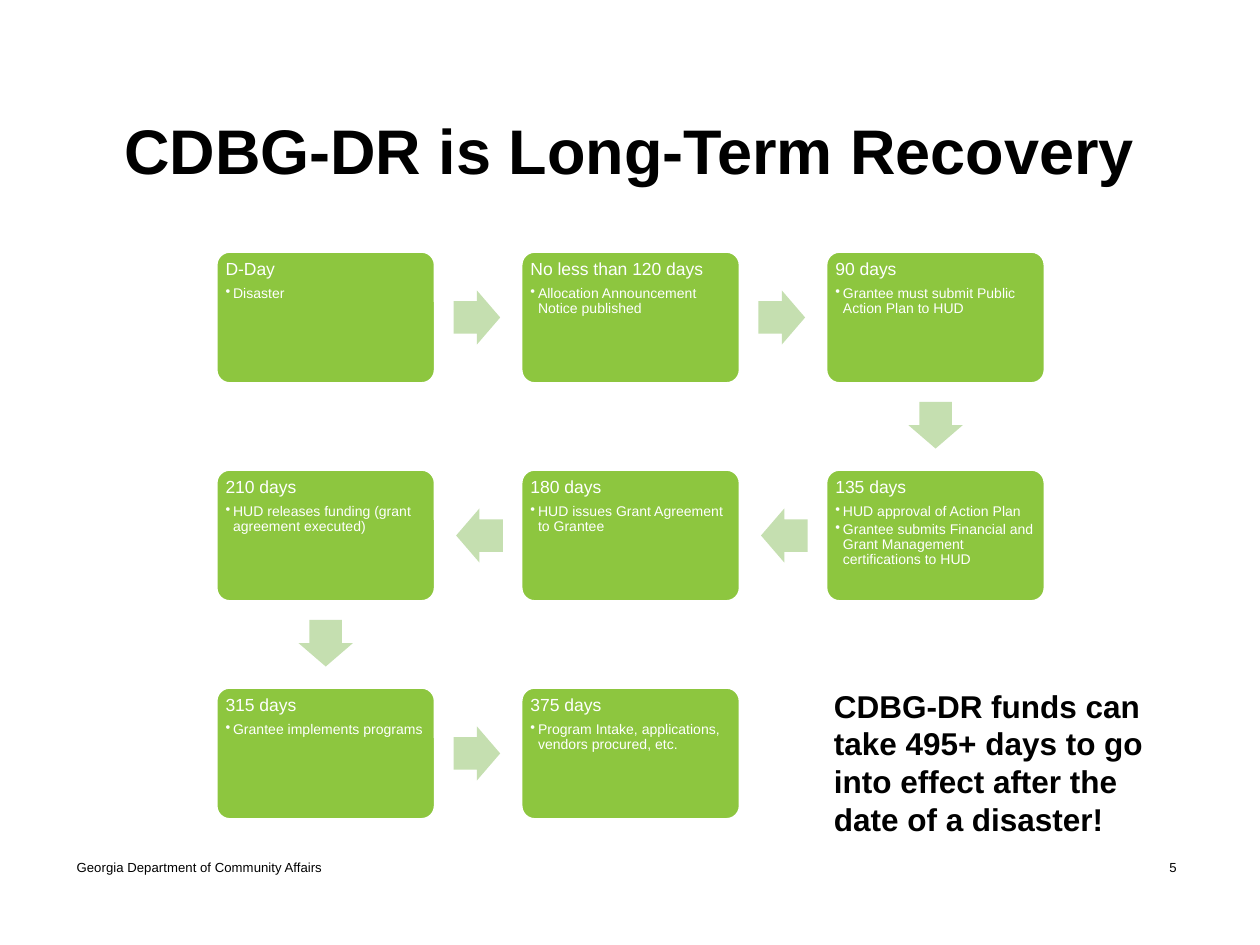
from itertools import pairwise
from math import atan2, degrees

from lxml.etree import SubElement
from pptx import Presentation
from pptx.dml.color import RGBColor
from pptx.enum.shapes import MSO_SHAPE as SHAPE
from pptx.enum.text import MSO_ANCHOR as ANCHOR, PP_ALIGN as ALIGN
from pptx.oxml.ns import qn
from pptx.util import Inches, Pt

COLORS = {"box": "8DC63F", "arrow": "C5DFB0", "light": "FFFFFF", "dark": "000000"}
STEPS = [
    ("D-Day", ["Disaster"]),
    ("No less than 120 days", ["Allocation Announcement Notice published"]),
    ("90 days", ["Grantee must submit Public Action Plan to HUD"]),
    ("135 days", ["HUD approval of Action Plan",
                  "Grantee submits Financial and Grant Management certifications to HUD"]),
    ("180 days", ["HUD issues Grant Agreement to Grantee"]),
    ("210 days", ["HUD releases funding (grant agreement executed)"]),
    ("315 days", ["Grantee implements programs"]),
    ("375 days", ["Program Intake, applications, vendors procured, etc."]),
]
COLUMNS = 3
BOX_WIDTH, BOX_HEIGHT = 1.73, 1.04
COLUMN_STEP, ROW_STEP = 2.42, 1.73
ARROW_LENGTH, ARROW_BREADTH, ARROW_SHIFT = 0.37, 0.43, 0.01


def color(name):
    """Return the named palette colour."""
    return RGBColor.from_string(COLORS[name])


def style(paragraph, size, color_name="dark", bold=False):
    """Set the font of every run in a paragraph."""
    for run in paragraph.runs:
        run.font.name, run.font.size, run.font.bold = "Arial", Pt(size), bold
        run.font.color.rgb = color(color_name)


def add_bullet(paragraph):
    """Give a paragraph a hanging round bullet."""
    properties = paragraph._p.get_or_add_pPr()
    properties.set("marL", str(Inches(0.06)))
    properties.set("indent", str(-Inches(0.06)))
    SubElement(properties, qn("a:buChar")).set("char", "•")


def add_label(slide, box, text, size, bold=False, align=ALIGN.LEFT, anchor=ANCHOR.MIDDLE):
    """Add a wrapped one-paragraph text box."""
    frame = slide.shapes.add_textbox(*map(Inches, box)).text_frame
    frame.word_wrap, frame.vertical_anchor = True, anchor
    frame.text = text
    frame.paragraphs[0].alignment = align
    style(frame.paragraphs[0], size, bold=bold)


def add_title(slide, box, text):
    """Place and format the title placeholder."""
    title = slide.shapes.title
    title.left, title.top, title.width, title.height = map(Inches, box)
    frame = title.text_frame
    frame.text = text
    frame.word_wrap, frame.vertical_anchor = True, ANCHOR.MIDDLE
    heading = frame.paragraphs[0]
    heading.alignment, heading.line_spacing = ALIGN.CENTER, 0.9
    style(heading, 36, bold=True)


def add_step(slide, left, top, period, actions):
    """Add one step box with its period and bulleted actions."""
    step = slide.shapes.add_shape(
        SHAPE.ROUNDED_RECTANGLE, *map(Inches, (left, top, BOX_WIDTH, BOX_HEIGHT)))
    step.adjustments[0] = 0.1
    step.shadow.inherit = False
    step.fill.solid()
    step.fill.fore_color.rgb = color("box")
    step.line.color.rgb = color("light")
    step.line.width = Pt(1)
    frame = step.text_frame
    frame.word_wrap, frame.vertical_anchor = True, ANCHOR.TOP
    frame.margin_left = frame.margin_right = Inches(0.04)
    frame.margin_top = frame.margin_bottom = Inches(0.04)
    frame.text = "\n".join([period, *actions])
    for index, paragraph in enumerate(frame.paragraphs):
        paragraph.alignment, paragraph.line_spacing = ALIGN.LEFT, 0.9
        paragraph.space_after = Pt(1.5 if index else 4)
        if index:
            paragraph.level = 1
            add_bullet(paragraph)
        style(paragraph, 8 if index else 10, "light")


def add_arrow(slide, start, end):
    """Add a block arrow between two neighbouring step positions."""
    (x1, y1), (x2, y2) = start, end
    angle = degrees(atan2(y2 - y1, x2 - x1))
    shift_x = ARROW_SHIFT * ((x2 > x1) - (x2 < x1))
    shift_y = ARROW_SHIFT * (y2 > y1)
    left = (x1 + x2 + BOX_WIDTH - ARROW_LENGTH) / 2 - shift_x
    top = (y1 + y2 + BOX_HEIGHT - ARROW_BREADTH) / 2 - shift_y
    arrow = slide.shapes.add_shape(
        SHAPE.RIGHT_ARROW, *map(Inches, (left, top, ARROW_LENGTH, ARROW_BREADTH)))
    arrow.adjustments[0], arrow.adjustments[1] = 0.6, 0.5
    arrow.rotation = angle
    arrow.shadow.inherit = False
    arrow.fill.solid()
    arrow.fill.fore_color.rgb = color("arrow")
    arrow.line.fill.background()


def add_timeline(slide, left, top):
    """Lay the steps out in rows that alternate direction."""
    positions = []
    for index, (period, actions) in enumerate(STEPS):
        row, column = divmod(index, COLUMNS)
        if row % 2:
            column = COLUMNS - 1 - column
        position = left + column * COLUMN_STEP, top + row * ROW_STEP
        positions.append(position)
        add_step(slide, *position, period, actions)
    for start, end in pairwise(positions):
        add_arrow(slide, start, end)


def add_footer(slide):
    """Add the department name and the page number."""
    add_label(slide, (0.51, 6.68, 3.38, 0.4), "Georgia Department of Community Affairs", 7.5)
    add_label(slide, (9.06, 6.51, 0.5, 0.74), "5", 7.5, align=ALIGN.CENTER)


def main():
    """Build and save the slide."""
    deck = Presentation()
    deck.slide_width, deck.slide_height = Inches(10), Inches(7.5)
    slide = deck.slides.add_slide(deck.slide_layouts[5])
    add_footer(slide)
    add_timeline(slide, 1.72, 2)
    add_title(slide, (0.69, 0.6, 8.61, 1.25), "CDBG-DR is Long-Term Recovery")
    add_label(slide, (6.52, 5.4, 2.78, 1.62),
              "CDBG-DR funds can take 495+ days to go into effect after the date of a disaster!",
              18, bold=True, anchor=ANCHOR.TOP)
    deck.save("out.pptx")


if __name__ == "__main__":
    main()
